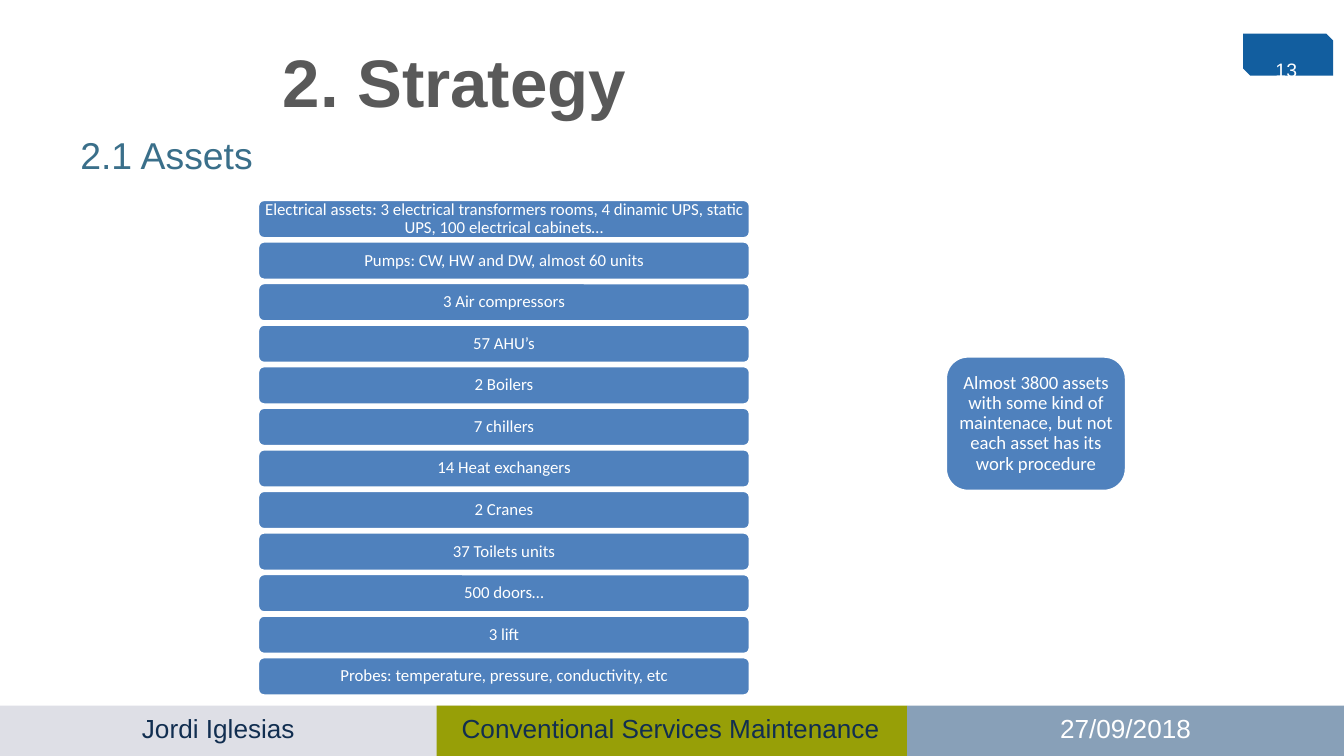
from pptx import Presentation
from pptx.dml.color import RGBColor
from pptx.enum.shapes import MSO_SHAPE
from pptx.enum.text import MSO_ANCHOR, PP_ALIGN
from pptx.util import Inches, Pt

RECTANGLE = MSO_SHAPE.RECTANGLE
ROUNDED = MSO_SHAPE.ROUNDED_RECTANGLE
SNIPPED = MSO_SHAPE.SNIP_2_DIAG_RECTANGLE
LEFT, CENTER, RIGHT = PP_ALIGN.LEFT, PP_ALIGN.CENTER, PP_ALIGN.RIGHT
MIDDLE = MSO_ANCHOR.MIDDLE

NAVY, WHITE, BLUE = "112E50", "FFFFFF", "4F81BD"

presentation = Presentation()
presentation.slide_width = Inches(10)
presentation.slide_height = presentation.slide_width * 9 // 16
slide = presentation.slides.add_slide(presentation.slide_layouts[6])

COLUMN = presentation.slide_width / 40
ROW = presentation.slide_height / 22.5


def add_block(kind, left, top, width, height, fill):
    shape = slide.shapes.add_shape(
        kind, int(left * COLUMN), int(top * ROW), int(width * COLUMN), int(height * ROW))
    shape.shadow.inherit = False
    shape.fill.solid()
    shape.fill.fore_color.rgb = RGBColor.from_string(fill)
    shape.line.fill.background()
    return shape


def write_text(shape, text, size, color, alignment, font="Arial"):
    shape.text_frame.word_wrap = True
    paragraph = shape.text_frame.paragraphs[0]
    paragraph.text = text
    paragraph.alignment = alignment
    paragraph.font.name = font
    paragraph.font.size = Pt(size)
    paragraph.font.color.rgb = RGBColor.from_string(color)
    return paragraph


add_block(SNIPPED, 37, 1, 2.68, 1.25, "125E9F")
for left, width, fill in [(0, 14, "DEDFE6"), (13, 14, "979F07"), (27, 13, "88A0B8")]:
    add_block(RECTANGLE, left, 21, width, 1.5, fill)

labels = [
    ("Jordi Iglesias", 0, 21, 13, 1.35, 14, NAVY, CENTER),
    ("Conventional Services Maintenance", 13, 21, 13.92, 1.35, 14, NAVY, CENTER),
    ("27/09/2018", 27, 21, 13, 1.35, 14, WHITE, CENTER),
    ("2. Strategy", 8.02, 1, 28.66, 2.84, 36, "595959", LEFT),
    ("2.1 Assets", 2, 3.75, 36, 1.48, 20, "3A6F8A", LEFT),
    ("13", 36.32, 1.52, 2.68, 1, 10.4, WHITE, RIGHT),
]
for text, left, top, width, height, size, color, alignment in labels:
    text_box = slide.shapes.add_textbox(
        int(left * COLUMN), int(top * ROW), int(width * COLUMN), int(height * ROW))
    paragraph = write_text(text_box, text, size, color, alignment)
    paragraph.font.bold = text == "2. Strategy"

assets = [
    "Electrical assets: 3 electrical transformers rooms, 4 dinamic UPS, static UPS, 100 electrical cabinets…",
    "Pumps: CW, HW and DW, almost 60 units",
    "3 Air compressors",
    "57 AHU’s",
    "2 Boilers",
    "7 chillers",
    "14 Heat exchangers",
    "2 Cranes",
    "37 Toilets units",
    "500 doors…",
    "3 lift",
    "Probes: temperature, pressure, conductivity, etc",
]
FIRST_TOP, LAST_TOP = 5.93, 19.54
PITCH = (LAST_TOP - FIRST_TOP) / (len(assets) - 1)
cards = [(text, 7.66, FIRST_TOP + index * PITCH, 14.68, 1.18, 9)
         for index, text in enumerate(assets)]
cards.append((
    "Almost 3800 assets with some kind of maintenace, but not each asset has its work procedure",
    28.13, 10.59, 5.4, 4.04, 10))

for text, left, top, width, height, size in cards:
    card = add_block(ROUNDED, left, top, width, height, BLUE)
    card.line.color.rgb = RGBColor.from_string(WHITE)
    card.line.width = Pt(2)
    frame = card.text_frame
    frame.vertical_anchor = MIDDLE
    frame.margin_left = frame.margin_right = Inches(0.04)
    frame.margin_top = frame.margin_bottom = Inches(0.02)
    paragraph = write_text(card, text, size, WHITE, CENTER, "Calibri")
    paragraph.line_spacing = 0.9

presentation.save("out.pptx")
